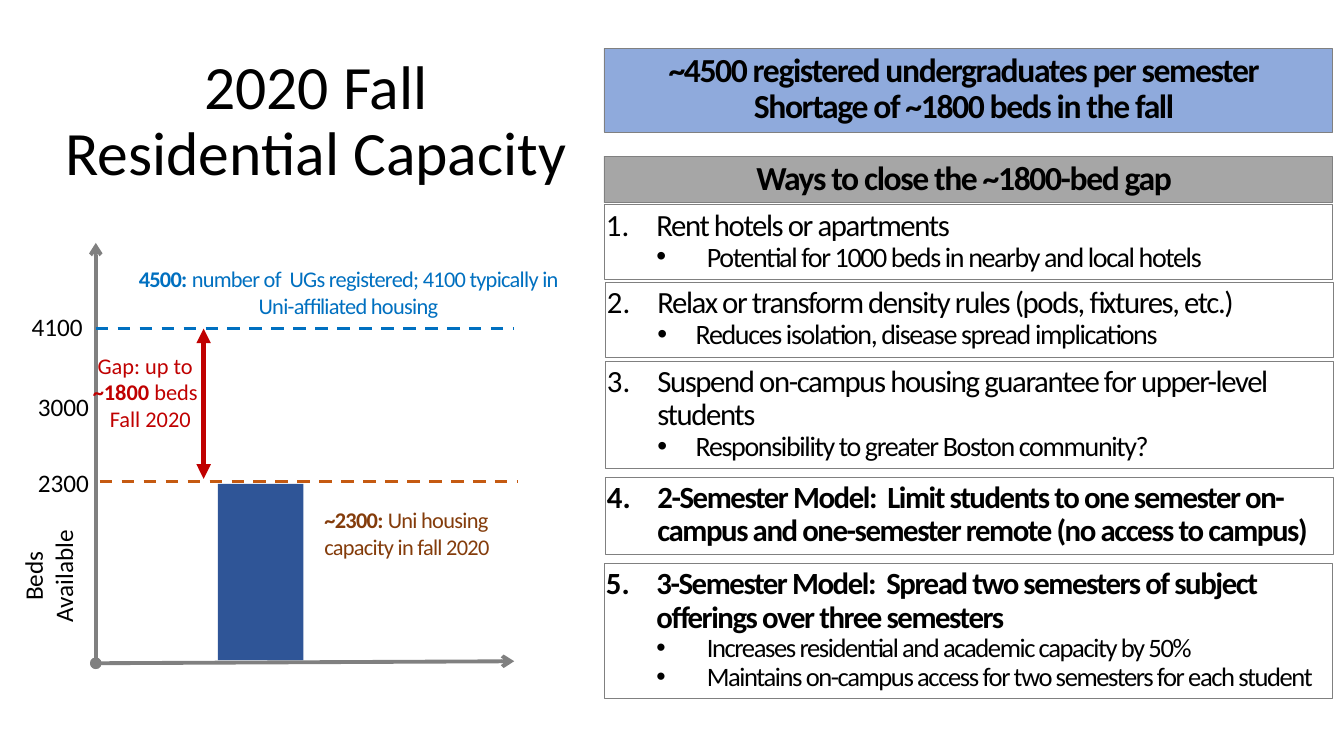
import lxml.etree
import pptx
import pptx.dml.color
import pptx.enum.dml
import pptx.enum.shapes
import pptx.enum.text
import pptx.oxml.ns
import pptx.util

Inches = pptx.util.Inches
Pt = pptx.util.Pt
ALIGN = pptx.enum.text.PP_ALIGN
ANCHOR = pptx.enum.text.MSO_ANCHOR
FIT = pptx.enum.text.MSO_AUTO_SIZE
HUES = {"black": "000000", "gray": "808080", "silver": "A6A6A6",
        "sky": "8FAADC", "bar": "2F5597", "blue": "0070C0",
        "orange": "C55A11", "brown": "843C0B", "red": "C00000"}


def paint(name):
    return pptx.dml.color.RGBColor.from_string(HUES[name])


def put(thing, values):
    for key, value in values.items():
        setattr(thing, key, value)


def add(parent, tag, **values):
    lxml.etree.SubElement(parent, pptx.oxml.ns.qn(tag), values)


class Board:
    font = "Calibri"
    inset = {"margin_left": Inches(0.02), "margin_top": Inches(0.05),
             "margin_right": Inches(0.1), "margin_bottom": Inches(0.05)}

    def __init__(self, deck):
        self.slide = deck.slides.add_slide(deck.slide_layouts[5])
        self.shapes = self.slide.shapes

    def words(self, para, runs, size, hue="black", space=0, align=ALIGN.LEFT):
        """Fill a paragraph with (text, bold) runs."""
        para.alignment = align
        for text, bold in runs:
            run = para.add_run()
            run.text = text
            put(run.font, {"name": self.font, "size": Pt(size), "bold": bold})
            run.font.color.rgb = paint(hue)
            if space:
                run._r.get_or_add_rPr().set("spc", str(int(space * 100)))

    def lines(self, frame, rows, **style):
        """Make one paragraph for each row of runs."""
        paras = []
        for place, runs in enumerate(rows):
            para = frame.add_paragraph() if place else frame.paragraphs[0]
            self.words(para, runs, **style)
            paras.append(para)
        return paras

    def title(self, text, box):
        head = self.shapes.title
        put(head, dict(zip(("left", "top", "width", "height"), map(Inches, box))))
        put(head.text_frame, {"word_wrap": True, "auto_size": FIT.NONE,
                              "vertical_anchor": ANCHOR.MIDDLE})
        para = head.text_frame.paragraphs[0]
        para.line_spacing = 0.9
        self.words(para, [(text, False)], 44, align=ALIGN.CENTER)

    def label(self, box, rows, turn=0, wrap=True, **style):
        note = self.shapes.add_textbox(*map(Inches, box))
        note.rotation = turn
        put(note.text_frame, {"word_wrap": wrap, "auto_size": FIT.SHAPE_TO_FIT_TEXT})
        self.lines(note.text_frame, rows, **style)

    def block(self, box, fill=None, edge=True):
        shape = self.shapes.add_shape(
            pptx.enum.shapes.MSO_SHAPE.RECTANGLE, *map(Inches, box))
        shape.shadow.inherit = False
        if fill:
            shape.fill.solid()
            shape.fill.fore_color.rgb = paint(fill)
        else:
            shape.fill.background()
        if edge:
            shape.line.color.rgb = paint("gray")
            shape.line.width = Pt(0.25)
        else:
            shape.line.fill.background()
        put(shape.text_frame, {"word_wrap": True, "vertical_anchor": ANCHOR.TOP,
                               **self.inset})
        return shape.text_frame

    def banner(self, box, fill, texts):
        frame = self.block(box, fill)
        frame.auto_size = FIT.SHAPE_TO_FIT_TEXT
        rows = [[(text, True)] for text in texts]
        for para in self.lines(frame, rows, size=24, space=-1, align=ALIGN.CENTER):
            para.line_spacing = 0.9

    def bullet(self, para, indent, hang, start=None):
        """Hang a paragraph on a number, or on a dot when start is None."""
        para.line_spacing = 0.9
        props = para._p.get_or_add_pPr()
        props.set("marL", str(Inches(indent)))
        props.set("indent", str(-Inches(hang)))
        if start:
            add(props, "a:buFont", typeface="+mj-lt")
            add(props, "a:buAutoNum", type="arabicPeriod", startAt=str(start))
        else:
            para.level = 1
            add(props, "a:buFont", typeface="Arial")
            add(props, "a:buChar", char="•")

    def option(self, box, start, head, bold, points, size, indent):
        frame = self.block(box)
        frame.auto_size = FIT.SHAPE_TO_FIT_TEXT
        para = frame.paragraphs[0]
        self.bullet(para, 0.5, 0.5, start)
        self.words(para, [(head, bold)], 22, space=-1)
        for point in points:
            para = frame.add_paragraph()
            self.bullet(para, indent, indent - 0.5)
            self.words(para, [(point, False)], size, space=-1)

    def line(self, ends, hue, width, dash=False, head=None, tail=None):
        link = self.shapes.add_connector(
            pptx.enum.shapes.MSO_CONNECTOR.STRAIGHT, *map(Inches, ends))
        link.line.color.rgb = paint(hue)
        link.line.width = Pt(width)
        if dash:
            link.line.dash_style = pptx.enum.dml.MSO_LINE.DASH
        stroke = link.line._get_or_add_ln()
        for tag, kind in (("a:headEnd", head), ("a:tailEnd", tail)):
            if kind:
                add(stroke, tag, type=kind)
        add(link._element.spPr, "a:effectLst")


def draw_chart(board):
    board.label((1.13, 2.58, 4.65, 0.64), [[
        ("4500: ", True),
        ("number of  UGs registered; 4100 typically in Uni-affiliated housing", False)]],
        size=16, hue="blue", space=-0.5, align=ALIGN.CENTER)
    for end in ((5.1, 6.56), (0.95, 2.41)):
        board.line((0.95, 6.58, *end), "gray", 2.75, head="oval", tail="arrow")
    board.block((2.16, 4.8, 0.85, 1.75), "bar", edge=False)
    for left, top, hue in ((0.95, 3.26, "blue"), (0.99, 4.78, "orange")):
        board.line((left, top, left + 4.15, top), hue, 2.25, dash=True)
    board.label((3.12, 4.97, 3.6, 0.64), [
        [("~2300:", True), (" Uni housing", False)],
        [("capacity in fall 2020", False)]], size=16, hue="brown", space=-0.5)
    board.line((2.02, 3.26, 2.02, 4.75), "red", 3.5, head="triangle", tail="triangle")
    board.label((0.82, 3.44, 1.29, 0.91), [
        [("Gap: up to ", False)],
        [("~1800 ", True), ("beds ", False)],
        [(" Fall 2020", False)]], size=16, hue="red", align=ALIGN.CENTER)
    for text, left, top in (("2300", 0.27, 4.59), ("4100", 0.21, 3.04),
                            ("3000", 0.27, 3.83)):
        board.label((left, top, 0.71, 0.4), [[(text, False)]], wrap=False,
                    size=18, align=ALIGN.RIGHT)
    board.label((-0.3, 5.36, 1.56, 0.71), [[("Beds", False)], [("Available", False)]],
                turn=270, size=18, align=ALIGN.CENTER)


def draw_list(board):
    wide = 7.22
    board.banner((5.99, 0.48, wide, 0.83), "sky", [
        "~4500 registered undergraduates per semester",
        "Shortage of ~1800 beds in the fall"])
    board.banner((5.99, 1.55, wide, 0.46), "silver", ["Ways to close the ~1800-bed gap"])
    options = [
        (5.99, 2.03, 0.74, "Rent hotels or apartments", False,
         ["Potential for 1000 beds in nearby and local hotels"], 20, 1),
        (6, 2.8, 0.74, "Relax or transform density rules (pods, fixtures, etc.)", False,
         ["Reduces isolation, disease spread implications"], 20, 0.88),
        (6, 3.58, 1.07, "Suspend on-campus housing guarantee for upper-level students",
         False, ["Responsibility to greater Boston community?"], 20, 0.88),
        (6, 4.73, 0.77, "2-Semester Model:  Limit students to one semester on-campus "
         "and one-semester remote (no access to campus)", True, [], 20, 1),
        (5.99, 5.59, 1.34, "3-Semester Model:  Spread two semesters of subject "
         "offerings over three semesters", True,
         ["Increases residential and academic capacity by 50%",
          "Maintains on-campus access for two semesters for each student"], 19, 1)]
    for start, (left, top, tall, *rest) in enumerate(options, 1):
        board.option((left, top, wide, tall), start, *rest)


def main():
    deck = pptx.Presentation()
    put(deck, {"slide_width": Inches(13.33), "slide_height": Inches(7.5)})
    board = Board(deck)
    board.title("2020 Fall Residential Capacity", (0.52, 0.99, 5.23, 0.45))
    draw_chart(board)
    draw_list(board)
    deck.save("out.pptx")


if __name__ == "__main__":
    main()
